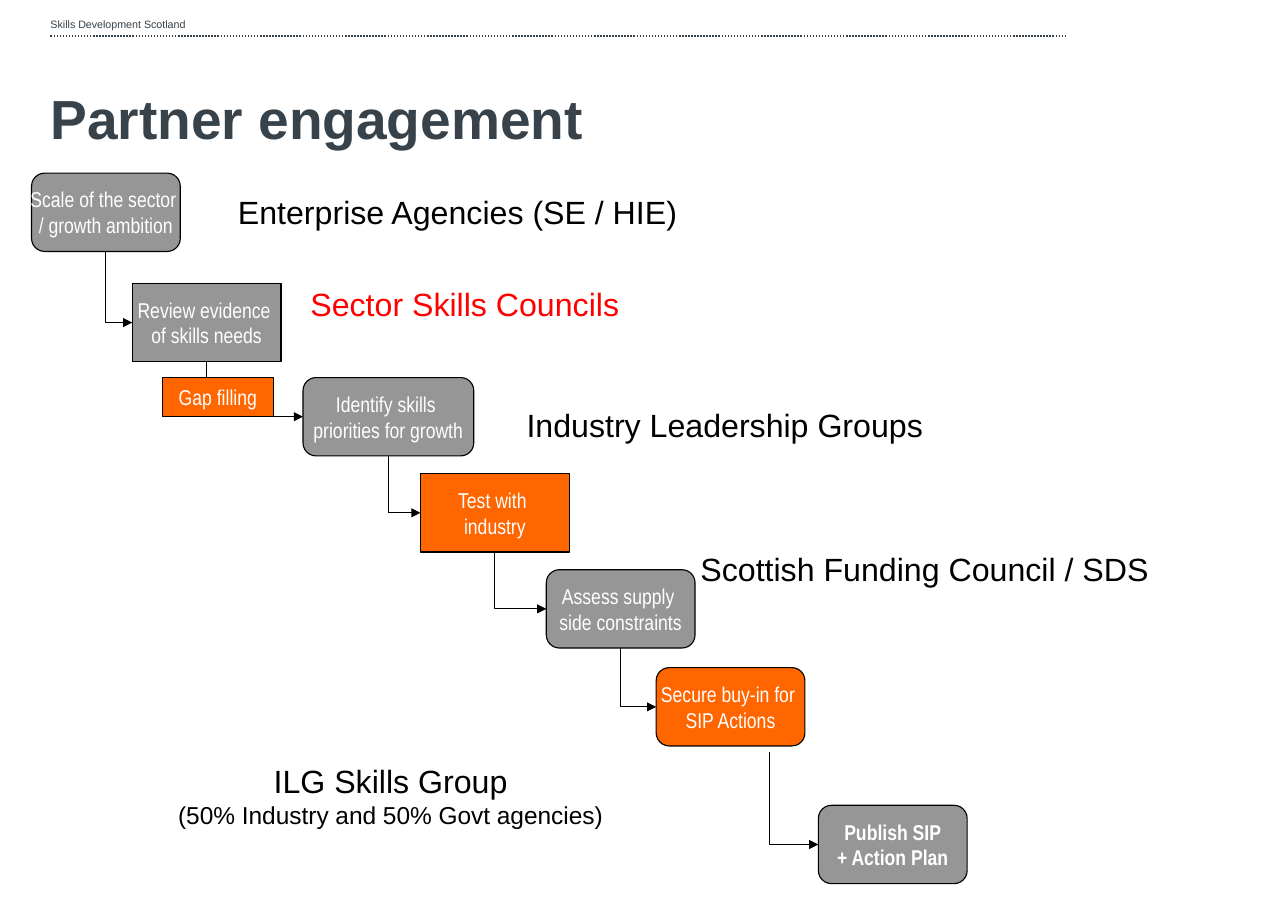
from pptx import Presentation
from pptx.dml.color import RGBColor
from pptx.enum import dml, shapes, text
from pptx.oxml import parse_xml
from pptx.oxml.ns import nsdecls, qn
from pptx.util import Pt

SLATE = RGBColor(0x37, 0x42, 0x4A)
GREY = RGBColor(0x96, 0x96, 0x96)
ORANGE = RGBColor(0xFF, 0x66, 0x00)
RED = RGBColor(0xFF, 0x00, 0x00)
BLACK = RGBColor(0, 0, 0)
WHITE = RGBColor(0xFF, 0xFF, 0xFF)

ROUND = shapes.MSO_SHAPE.FLOWCHART_ALTERNATE_PROCESS
SQUARE = shapes.MSO_SHAPE.FLOWCHART_PROCESS
LEFT, MID = text.PP_ALIGN.LEFT, text.PP_ALIGN.CENTER
STEP_W, STEP_H = 97.2, 51.2

# lines, left, top, width, kind, fill
STEPS = [
    (["Scale of the sector ", "/ growth ambition"], 20.6, 113.2, STEP_W, ROUND, GREY),
    (["Review evidence ", "of skills needs"], 86.4, 185.2, STEP_W, SQUARE, GREY),
    (["Identify skills ", "priorities for growth"], 198, 246.8, 111.6, ROUND, GREY),
    (["Test with ", "industry"], 274.8, 309.6, STEP_W, SQUARE, ORANGE),
    (["Assess supply ", "side constraints"], 357, 372.4, STEP_W, ROUND, GREY),
    (["Secure buy-in for ", "SIP Actions"], 428.8, 436.4, STEP_W, ROUND, ORANGE),
    (["Publish SIP", "+ Action Plan"], 534.8, 526.4, STEP_W, ROUND, GREY),
]
# line, left, top, width, colour
ROLES = [
    ("Enterprise Agencies (SE / HIE)", 148.4, 122.4, 303.8, BLACK),
    ("Sector Skills Councils", 195.8, 182.2, 218.2, RED),
    ("Industry Leadership Groups", 337, 261.4, 275.8, BLACK),
    ("Scottish Funding Council / SDS", 450.7, 355.7, 309.6, BLACK),
]


def write(shape, lines, sizes, font="Arial", color=BLACK, bold=False, align=LEFT,
          anchor=text.MSO_ANCHOR.TOP, wrap=True, inset=(7.2, 3.6), space=None):
    """Fill a shape with one paragraph per line; sizes holds one size per line."""
    frame = shape.text_frame
    frame.auto_size = text.MSO_AUTO_SIZE.NONE
    frame.word_wrap = wrap
    frame.vertical_anchor = anchor
    frame.margin_left = frame.margin_right = Pt(inset[0])
    frame.margin_top = frame.margin_bottom = Pt(inset[1])
    frame.text = "\n".join(lines)
    for par, size in zip(frame.paragraphs, sizes):
        par.alignment = align
        if space:
            par.line_spacing = Pt(space)
        face = par.runs[0].font
        face.name, face.size, face.bold = font, Pt(size), bold
        face.color.rgb = color


def add_text(slide, lines, sizes, left, top, width, height, **look):
    box = slide.shapes.add_textbox(Pt(left), Pt(top), Pt(width), Pt(height))
    write(box, lines, sizes, **look)
    return box


def add_step(slide, lines, left, top, width, kind, fill, height=STEP_H, bold=False):
    step = slide.shapes.add_shape(kind, Pt(left), Pt(top), Pt(width), Pt(height))
    step.shadow.inherit = False
    step.fill.solid()
    step.fill.fore_color.rgb = fill
    step.line.color.rgb = BLACK
    step.line.width = Pt(0.75)
    write(step, lines, [14] * len(lines), font="Arial Narrow", color=WHITE, bold=bold,
          align=MID, anchor=text.MSO_ANCHOR.MIDDLE, wrap=False, inset=(6.5, 3.2))
    return step


def add_line(slide, kind, x1, y1, x2, y2, color, width):
    line = slide.shapes.add_connector(kind, Pt(x1), Pt(y1), Pt(x2), Pt(y2))
    line.line.color.rgb = color
    line.line.width = Pt(width)
    line._element.spPr.append(parse_xml(f"<a:effectLst {nsdecls('a')}/>"))
    return line


def add_elbow(slide, start, end, source=None):
    """Arrow going down from start (a point), then right to the left side of end."""
    goal = end.left.pt, end.top.pt + end.height.pt / 2
    elbow = add_line(slide, shapes.MSO_CONNECTOR.ELBOW, *start, *goal, BLACK, 0.75)
    if source is not None:
        elbow.begin_connect(source, 2)
    elbow.end_connect(end, 1)

    # A one-bend connector starts sideways, so it is turned to start downwards.
    wide, high = elbow.width, elbow.height
    elbow.left += (wide - high) // 2
    elbow.top += (high - wide) // 2
    elbow.width, elbow.height = high, wide
    props = elbow._element.spPr
    frame = props.find(qn("a:xfrm"))
    frame.set("rot", "16200000")
    frame.set("flipH", "1")
    props.find(qn("a:prstGeom")).set("prst", "bentConnector2")
    props.find(qn("a:ln")).append(parse_xml(f'<a:tailEnd {nsdecls("a")} type="triangle"/>'))


def add_head(slide):
    rule = add_line(slide, shapes.MSO_CONNECTOR.STRAIGHT, 33, 23.6, 696, 23.6, SLATE, 1)
    rule.line.dash_style = dml.MSO_LINE.ROUND_DOT
    add_text(slide, ["Skills Development Scotland"], [7], 33, 11.7, 331, 8,
             color=SLATE, inset=(0, 0))
    title = slide.shapes.title
    title.left, title.top, title.width, title.height = Pt(33), Pt(62.6), Pt(564), Pt(78.5)
    write(title, ["Partner engagement"], [36], color=SLATE, bold=True,
          inset=(0, 0), space=36)


def main():
    deck = Presentation()
    deck.slide_width, deck.slide_height = Pt(841.68), Pt(595.44)
    slide = deck.slides.add_slide(deck.slide_layouts[5])
    add_head(slide)

    last = len(STEPS) - 1
    steps = [add_step(slide, *step, bold=i == last) for i, step in enumerate(STEPS)]
    for step, after in zip(steps[:-2], steps[1:-1]):
        foot = step.left.pt + step.width.pt / 2, step.top.pt + step.height.pt
        add_elbow(slide, foot, after, source=step)
    add_elbow(slide, (502.6, 491.8), steps[-1])
    add_step(slide, ["Gap filling"], 106, 246.8, 72.8, SQUARE, ORANGE, height=25.6)

    for line, left, top, width, color in ROLES:
        role = add_text(slide, [line], [21], left, top, width, 32.4, color=color, wrap=False)
        role.text_frame.auto_size = text.MSO_AUTO_SIZE.SHAPE_TO_FIT_TEXT
    add_text(slide, ["ILG Skills Group", "(50% Industry and 50% Govt agencies)"], [21, 16],
             92.9, 494, 324.7, 51.8, align=MID)
    deck.save("out.pptx")


if __name__ == "__main__":
    main()
